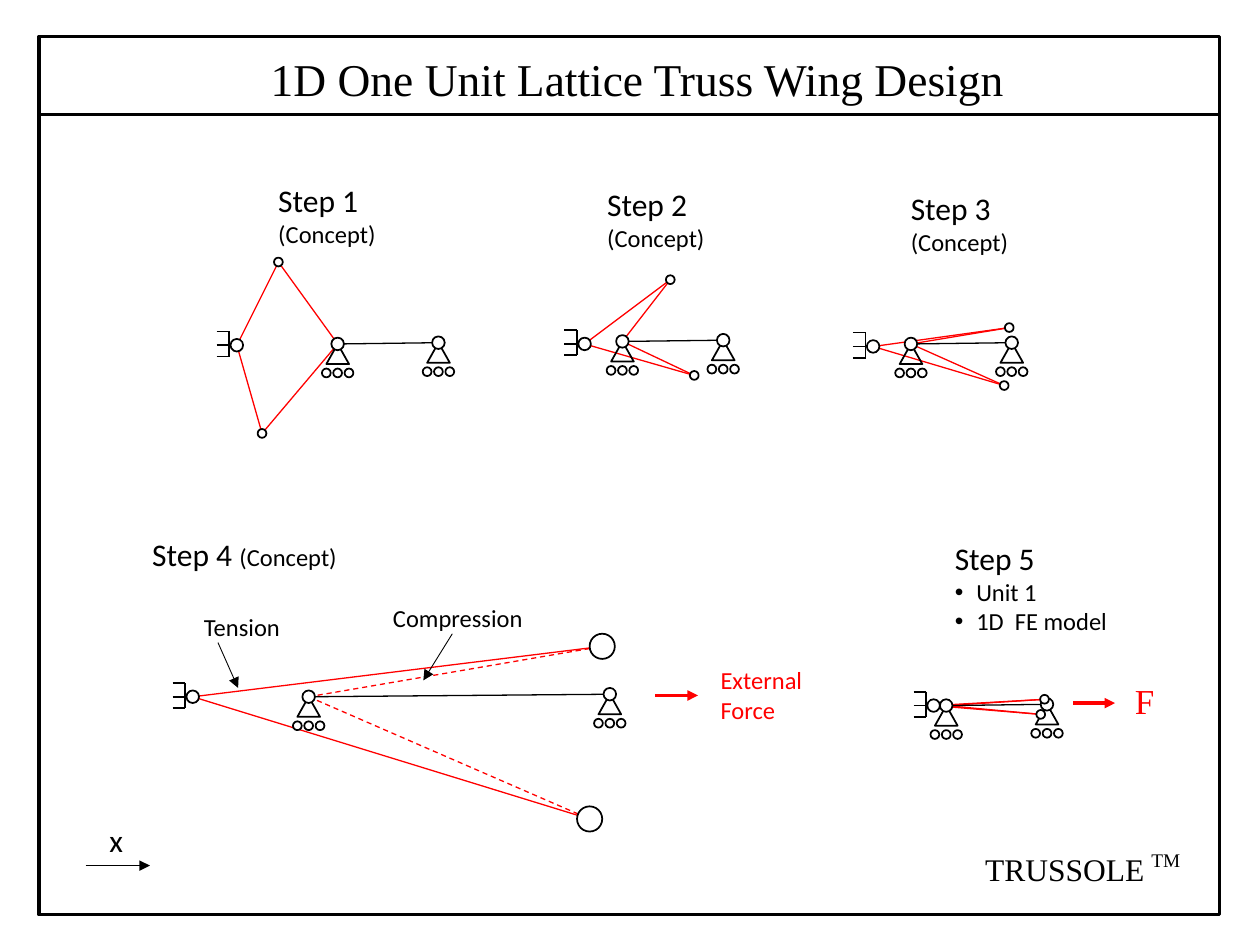
from lxml import etree
from pptx import Presentation
from pptx import util as u
from pptx.dml.color import RGBColor
from pptx.enum import dml, shapes, text
from pptx.oxml.ns import qn

BLACK = RGBColor(0, 0, 0)
WHITE = RGBColor(255, 255, 255)
RED = RGBColor(255, 0, 0)
SANS, SERIF = "Calibri", "Times New Roman"

# Content: centres of the wall pin, the two rollers and the two free joints
STEPS = [
    dict(wall=(1.88, 2.74), rollers=[(2.68, 2.73), (3.48, 2.72)],
         joints=[(2.21, 2.08), (2.08, 3.44)]),
    dict(wall=(4.64, 2.73), rollers=[(4.94, 2.71), (5.74, 2.7)],
         joints=[(5.32, 2.22), (5.51, 2.98)]),
    dict(wall=(6.93, 2.75), rollers=[(7.23, 2.73), (8.03, 2.72)],
         joints=[(8.01, 2.6), (7.97, 3.06)]),
    dict(wall=(1.53, 5.53), rollers=[(2.45, 5.53), (4.84, 5.51)],
         joints=[(4.78, 5.13), (4.68, 6.5)], joint_radius=0.1, dashed=True),
    dict(wall=(7.41, 5.6), rollers=[(7.51, 5.6), (8.31, 5.59)],
         joints=[(8.29, 5.55), (8.26, 5.67)]),
]

# Labels: box, font, colour, paragraphs of (text, size) runs
CONCEPT = [("(Concept)", 14)]
LABELS = [
    ((2.05, 0.36, 6.17, 0.54), SERIF, BLACK,
     [[("1D One Unit Lattice Truss Wing Design", 26)]]),
    ((2.11, 1.39, 1.15, 0.64), SANS, BLACK, [[("Step 1", 18)], CONCEPT]),
    ((4.72, 1.42, 1.15, 0.64), SANS, BLACK, [[("Step 2", 18)], CONCEPT]),
    ((7.13, 1.45, 1.15, 0.64), SANS, BLACK, [[("Step 3", 18)], CONCEPT]),
    ((1.11, 4.2, 1.85, 0.4), SANS, BLACK, [[("Step 4 ", 18)] + CONCEPT]),
    ((1.52, 4.81, 0.88, 0.34), SANS, BLACK, [[("Tension", 14)]]),
    ((3.02, 4.74, 1.35, 0.34), SANS, BLACK, [[("Compression", 14)]]),
    ((5.62, 5.23, 0.91, 0.57), SANS, RED, [[("External Force", 14)]]),
    ((8.91, 5.34, 0.37, 0.44), SERIF, RED, [[("F", 20)]]),
    ((0.77, 6.47, 0.31, 0.4), SANS, BLACK, [[("x", 18)]]),
    ((7.72, 6.7, 1.52, 0.4), SERIF, BLACK, [[("TRUSSOLE", 18)]]),
    ((9.04, 6.68, 0.51, 0.27), SERIF, BLACK, [[("TM", 11)]]),
]
STEP_5 = ((7.48, 4.23, 1.47, 0.88), SANS, BLACK,
          [[("Step 5", 18)], [("Unit 1", 14)], [("1D  FE model", 14)]])

# Arrows: start, end, colour, width
ARROWS = [
    ((0.68, 6.87), (1.19, 6.87), BLACK, 0.5),
    ((1.73, 5.1), (1.89, 5.46), BLACK, 0.5),
    ((3.59, 5.03), (3.36, 5.4), BLACK, 0.5),
    ((5.2, 5.52), (5.54, 5.52), RED, 2),
    ((8.52, 5.58), (8.85, 5.58), RED, 2),
]
FRAME = (0.31, 0.29, 9.37, 6.97)
DIVIDER_Y = 0.91
PIN, WHEEL = 0.05, 0.035

presentation = Presentation()
presentation.slide_width, presentation.slide_height = u.Inches(10), u.Inches(7.5)
slide = presentation.slides.add_slide(presentation.slide_layouts[6])


def inches(values):
    return [u.Inches(value) for value in values]


def add_outline(kind, box, width=1, fill=None):
    shape = slide.shapes.add_shape(kind, *inches(box))
    shape.shadow.inherit = False
    if fill is None:
        shape.fill.background()
    else:
        shape.fill.solid()
        shape.fill.fore_color.rgb = fill
    shape.line.color.rgb = BLACK
    shape.line.width = u.Pt(width)
    return shape


def add_circle(centre, radius):
    x, y = centre
    add_outline(shapes.MSO_SHAPE.OVAL,
                (x - radius, y - radius, 2 * radius, 2 * radius), fill=WHITE)


def add_line(start, end, color=BLACK, width=0.75, dashed=False, arrow=False):
    line = slide.shapes.add_connector(shapes.MSO_CONNECTOR.STRAIGHT,
                                      *inches(start + end))
    line.line.color.rgb = color
    line.line.width = u.Pt(width)
    if dashed:
        line.line.dash_style = dml.MSO_LINE.DASH
    if arrow:
        etree.SubElement(line.line._get_or_add_ln(), qn("a:tailEnd"), type="triangle")
    etree.SubElement(line._element.spPr, qn("a:effectLst"))


def add_label(box, font, color, paragraphs):
    frame = slide.shapes.add_textbox(*inches(box)).text_frame
    frame.word_wrap = True
    frame.auto_size = text.MSO_AUTO_SIZE.SHAPE_TO_FIT_TEXT
    for index, runs in enumerate(paragraphs):
        paragraph = frame.add_paragraph() if index else frame.paragraphs[0]
        for words, size in runs:
            run = paragraph.add_run()
            run.text = words
            run.font.name = font
            run.font.size = u.Pt(size)
            run.font.color.rgb = color
    return frame


def add_bullet(paragraph, indent=0.17):
    properties = paragraph._p.get_or_add_pPr()
    properties.set("marL", str(u.Inches(indent)))
    properties.set("indent", str(-u.Inches(indent)))
    etree.SubElement(properties, qn("a:buFont"), typeface="Arial")
    etree.SubElement(properties, qn("a:buChar"), char="•")


def add_wall(centre):
    x, y = centre
    post = x - 0.06
    prongs = (y - 0.11, y, y + 0.09)
    add_line((post, prongs[0]), (post, prongs[-1]), width=1)
    for prong in prongs:
        add_line((post - 0.1, prong), (post, prong), width=1)
    add_circle(centre, PIN)


def add_roller(centre):
    x, y = centre
    add_outline(shapes.MSO_SHAPE.ISOSCELES_TRIANGLE, (x - 0.09, y, 0.18, 0.16))
    add_circle(centre, PIN)
    for offset in (-0.09, 0, 0.09):
        add_circle((x + offset, y + 0.23), WHEEL)


def add_truss(wall, rollers, joints, joint_radius=WHEEL, dashed=False):
    for joint in joints:
        add_line(wall, joint, RED)
        add_line(rollers[0], joint, RED, dashed=dashed)
    add_line(*rollers)
    add_wall(wall)
    for roller in rollers:
        add_roller(roller)
    for joint in joints:
        add_circle(joint, joint_radius)


# Frame and title rule
add_outline(shapes.MSO_SHAPE.RECTANGLE, FRAME, width=2)
add_line((FRAME[0], DIVIDER_Y), (FRAME[0] + FRAME[2], DIVIDER_Y), width=2)

# Trusses
for step in STEPS:
    add_truss(**step)

# Labels
for label in LABELS:
    add_label(*label)
for item in add_label(*STEP_5).paragraphs[1:]:
    add_bullet(item)

# Arrows
for arrow in ARROWS:
    add_line(*arrow, arrow=True)

presentation.save("out.pptx")
